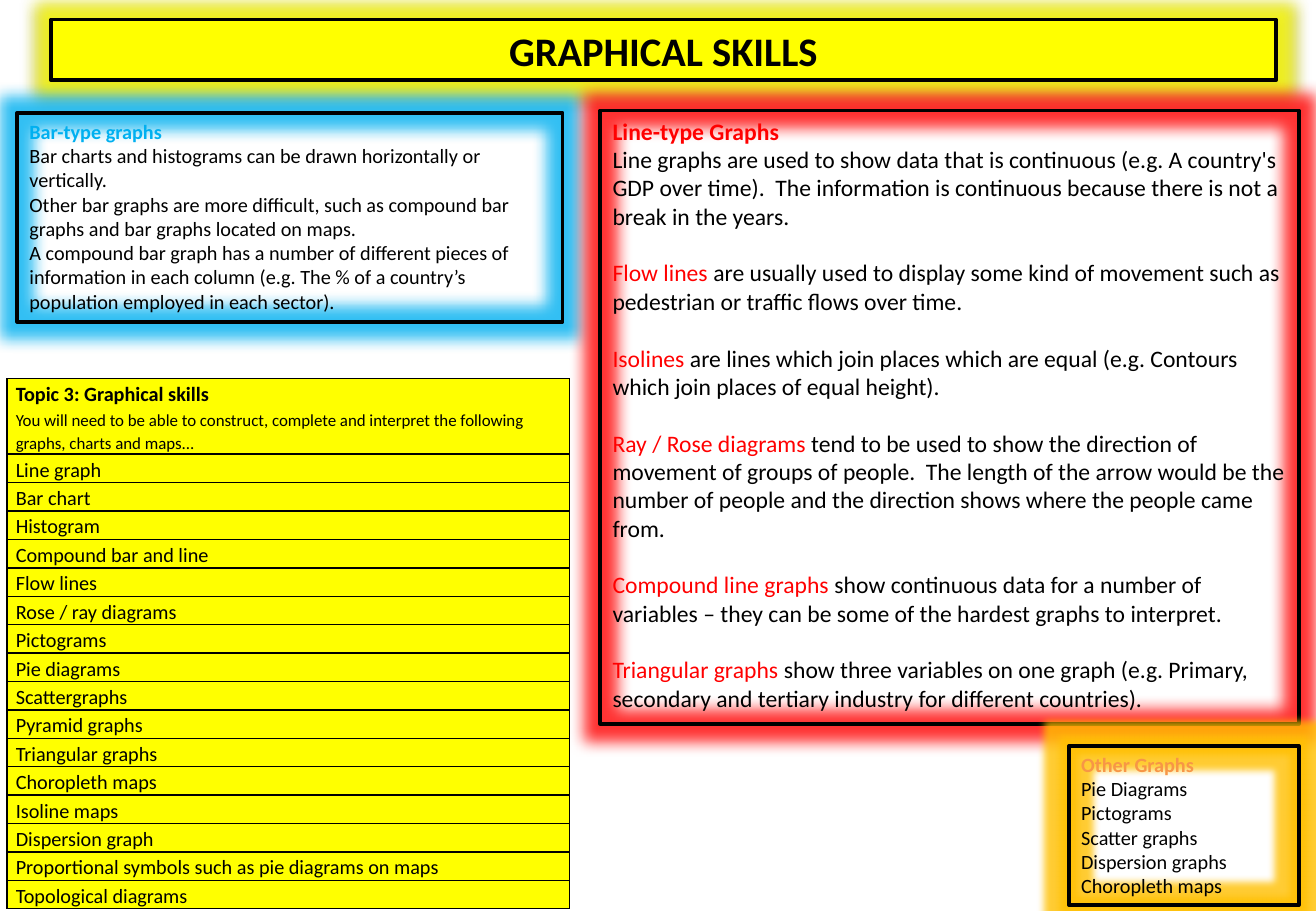
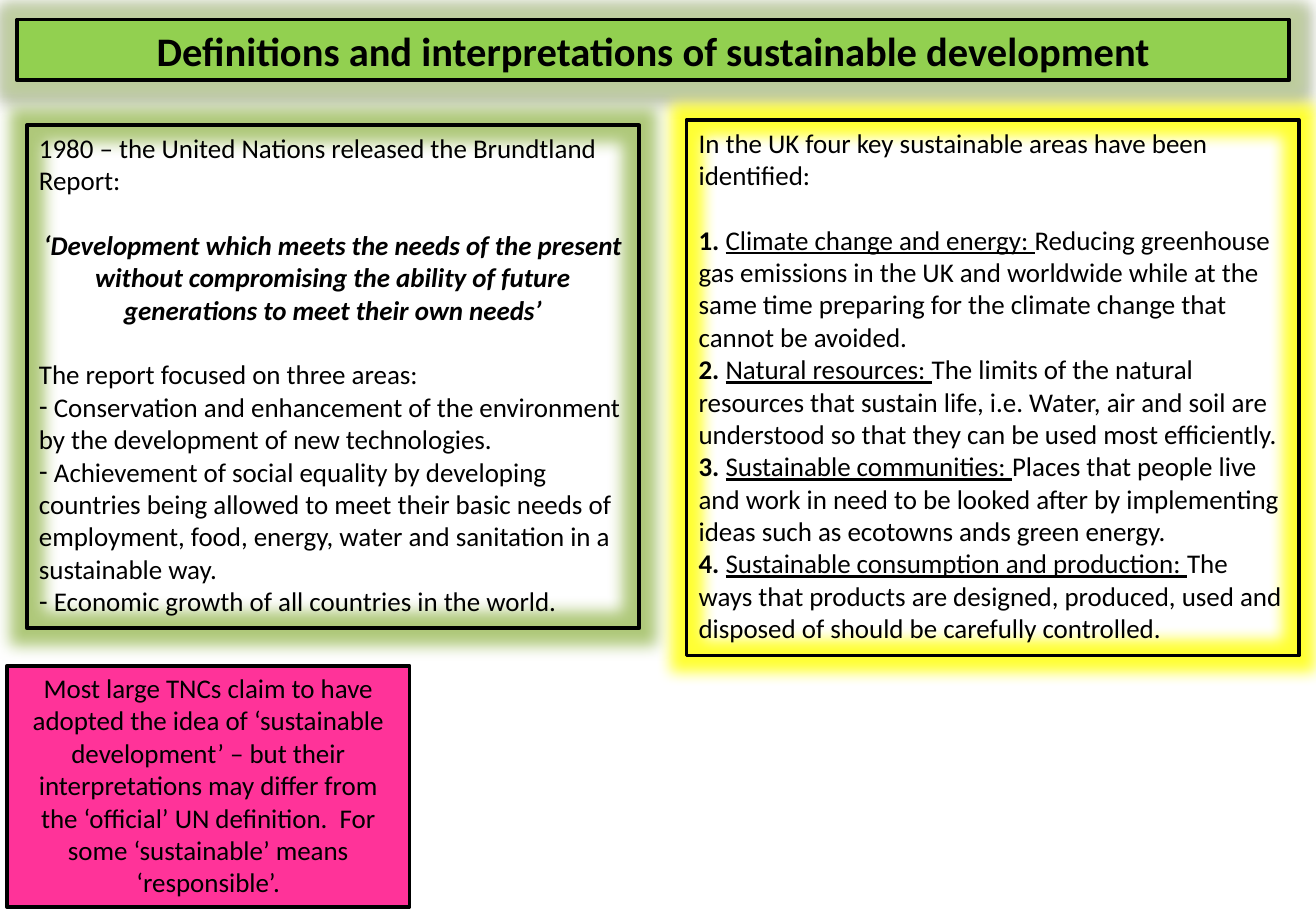
"""Two revision slides: graphical skills and sustainable development."""
from lxml.etree import SubElement, fromstring
from pptx import Presentation
from pptx.dml.color import RGBColor
from pptx.enum.text import MSO_ANCHOR, MSO_AUTO_SIZE, PP_ALIGN
from pptx.oxml.ns import qn
from pptx.util import Cm, Pt

FONT = "Calibri"
COLOURS = {"black": "000000", "yellow": "FFFF00", "blue": "00B0F0", "red": "FF0000",
           "orange": "F79646", "amber": "FFC000", "lime": "92D050", "sage": "9BBB59",
           "pale sage": "C3D69B", "pink": "FF3399"}
BOLD, UNDERLINED = {"bold": True}, {"underline": True}
RED = {"colour": "red"}
GAP, CENTRED, DASH = {"gap": True}, {"alignment": PP_ALIGN.CENTER}, {"bullet": "-"}


def heading(text, colour):
    return [(text, {"bold": True, "colour": colour})], {}


def plain(text, **layout):
    return [(text, {})], layout


def kind_of_graph(name, description):
    return [(name, RED), (description, {})], GAP


def numbered(number, area, explanation, **layout):
    return [(f"{number}. ", BOLD), (f"{area}: ", UNDERLINED), (explanation, {})], layout


SKILLS = {
    "title": {"text": "GRAPHICAL SKILLS", "box": (1.07, 0.41, 25.6, 1.27),
              "fill": "yellow", "glow": "yellow"},
    "panels": [
        {"box": (0.36, 2.36, 11.4, 4.37), "glow": "blue", "size": 12, "paragraphs": [
            heading("Bar-type graphs", "blue"),
            plain("Bar charts and histograms can be drawn horizontally or vertically."),
            plain("Other bar graphs are more difficult, such as compound bar graphs and "
                  "bar graphs located on maps."),
            plain("A compound bar graph has a number of different pieces of information in "
                  "each column (e.g. The % of a country’s population employed in each "
                  "sector)."),
        ]},
        {"box": (12.55, 2.31, 14.6, 12.83), "glow": "red", "size": 14, "paragraphs": [
            heading("Line-type Graphs", "red"),
            plain("Line graphs are used to show data that is continuous (e.g. A country's "
                  "GDP over time).  The information is continuous because there is not a "
                  "break in the years."),
            kind_of_graph("Flow lines ", "are usually used to display some kind of movement "
                          "such as pedestrian or traffic flows over time."),
            kind_of_graph("Isolines", " are lines which join places which are equal (e.g. "
                          "Contours which join places of equal height)."),
            kind_of_graph("Ray / Rose diagrams ", "tend to be used to show the direction of "
                          "movement of groups of people.  The length of the arrow would be "
                          "the number of people and the direction shows where the people "
                          "came from."),
            kind_of_graph("Compound line graphs ", "show continuous data for a number of "
                          "variables – they can be some of the hardest graphs to "
                          "interpret."),
            kind_of_graph("Triangular graphs ", "show three variables on one graph (e.g. "
                          "Primary, secondary and tertiary industry for different "
                          "countries)."),
        ]},
        {"box": (22.35, 15.6, 4.8, 3.33), "glow": "amber", "glow_radius": 9, "size": 12,
         "paragraphs": [
             heading("Other Graphs", "orange"),
             *map(plain, ["Pie Diagrams", "Pictograms", "Scatter graphs",
                          "Dispersion graphs", "Choropleth maps"]),
         ]},
    ],
}

TOPIC = {
    "left": 0.15, "top": 7.92, "width": 11.76, "header_height": 1.55, "row_height": 0.58,
    "heading": "Topic 3: Graphical skills",
    "intro": "You will need to be able to construct, complete and interpret the following "
             "graphs, charts and maps...",
    "skills": ["Line graph", "Bar chart", "Histogram", "Compound bar and line",
               "Flow lines", "Rose / ray diagrams", "Pictograms", "Pie diagrams",
               "Scattergraphs", "Pyramid graphs", "Triangular graphs", "Choropleth maps",
               "Isoline maps", "Dispersion graph",
               "Proportional symbols such as pie diagrams on maps",
               "Topological diagrams"],
}

SUSTAINABILITY = {
    "title": {"text": "Definitions and interpretations of sustainable development",
              "box": (0.36, 0.41, 26.59, 1.27), "fill": "lime", "glow": "pale sage"},
    "panels": [
        {"box": (0.56, 2.62, 12.8, 10.52), "glow": "sage", "size": 16, "paragraphs": [
            plain("1980 – the United Nations released the Brundtland Report:"),
            ([("‘Development which meets the needs of the present without compromising the "
               "ability of future generations to meet their own needs’",
               {"bold": True, "italic": True})], GAP | CENTRED),
            plain("The report focused on three areas:", **GAP),
            plain(" Conservation and enhancement of the environment by the development of "
                  "new technologies.", **DASH),
            plain(" Achievement of social equality by developing countries being allowed to "
                  "meet their basic needs of employment, food, energy, water and "
                  "sanitation in a sustainable way.", **DASH),
            plain(" Economic growth of all countries in the world.", **DASH),
        ]},
        {"box": (14.35, 2.51, 12.8, 11.2), "glow": "yellow", "size": 16, "paragraphs": [
            plain("In the UK four key sustainable areas have been identified:"),
            numbered(1, "Climate change and energy", "Reducing greenhouse gas emissions in "
                     "the UK and worldwide while at the same time preparing for the climate "
                     "change that cannot be avoided.", **GAP),
            numbered(2, "Natural resources", "The limits of the natural resources that "
                     "sustain life, i.e. Water, air and soil are understood so that they "
                     "can be used most efficiently."),
            numbered(3, "Sustainable communities", "Places that people live and work in "
                     "need to be looked after by implementing ideas such as ecotowns ands "
                     "green energy."),
            numbered(4, "Sustainable consumption and production", "The ways that products "
                     "are designed, produced, used and disposed of should be carefully "
                     "controlled."),
        ]},
        {"box": (0.15, 13.92, 8.41, 5.05), "fill": "pink", "size": 16, "paragraphs": [
            plain("Most large TNCs claim to have adopted the idea of ‘sustainable "
                  "development’ – but their interpretations may differ from the ‘official’ "
                  "UN definition.  For some ‘sustainable’ means ‘responsible’.", **CENTRED),
        ]},
    ],
}


def rgb(colour):
    return RGBColor.from_string(COLOURS[colour])


def apply(target, formats):
    for attribute, value in formats.items():
        setattr(target, attribute, value)


def add_colour(parent, colour, alpha):
    tint = SubElement(parent, qn("a:srgbClr"), val=COLOURS[colour])
    SubElement(tint, qn("a:alpha"), val=str(alpha * 1000))


def frame(box, look, shadow=False):
    """Place a box and give it the black outline, fill, glow and shadow."""
    apply(box, dict(zip(("left", "top", "width", "height"), map(Cm, look["box"]))))
    box.shadow.inherit = False
    if "fill" in look:
        box.fill.solid()
        box.fill.fore_color.rgb = rgb(look["fill"])
    else:
        box.fill.background()
    box.line.color.rgb = rgb("black")
    box.line.width = Pt(2.25)
    effects = box.element.spPr.find(qn("a:effectLst"))
    if "glow" in look:
        radius = Pt(look.get("glow_radius", 18))
        add_colour(SubElement(effects, qn("a:glow"), rad=str(radius)), look["glow"], 80)
    if shadow:
        cast = SubElement(effects, qn("a:outerShdw"), blurRad=str(Pt(3.1)),
                          dist=str(Pt(1.6)), dir="5400000", rotWithShape="0")
        add_colour(cast, "black", 38)
    apply(box.text_frame, {"word_wrap": True, "auto_size": MSO_AUTO_SIZE.NONE})


def write(text_frame, paragraphs, size, line_spacing=1.0):
    """Fill a text frame with paragraphs of formatted runs."""
    for index, (runs, layout) in enumerate(paragraphs):
        paragraph = text_frame.add_paragraph() if index else text_frame.paragraphs[0]
        properties = paragraph._p.get_or_add_pPr()
        for indent in ("marL", "indent"):
            properties.set(indent, "0")
        if "bullet" in layout:
            SubElement(properties, qn("a:buChar"), char=layout["bullet"])
        else:
            SubElement(properties, qn("a:buNone"))
        apply(paragraph, {"alignment": layout.get("alignment", PP_ALIGN.LEFT),
                          "line_spacing": line_spacing,
                          "space_before": Pt(size * 1.2 if "gap" in layout else 0),
                          "space_after": Pt(0)})
        for text, style in runs:
            run = paragraph.add_run()
            run.text = text
            look = {"name": FONT, "size": Pt(size), "bold": False} | style
            run.font.color.rgb = rgb(look.pop("colour", "black"))
            apply(run.font, look)


def add_sheet(deck, sheet):
    """Add a slide with its title band and three framed panels."""
    slide = deck.slides.add_slide(deck.slide_layouts[3])
    band, *bodies = slide.placeholders
    title = sheet["title"]
    frame(band, title, shadow=True)
    write(band.text_frame, [([(title["text"], BOLD)], CENTRED)], 24)
    bodies.append(slide.shapes.add_textbox(0, 0, 0, 0))
    for box, panel in zip(bodies, sheet["panels"]):
        frame(box, panel)
        box.text_frame.vertical_anchor = MSO_ANCHOR.TOP
        write(box.text_frame, panel["paragraphs"], panel["size"])
    return slide


def border_cell(cell):
    properties = cell._tc.get_or_add_tcPr()
    for position, side in enumerate(("lnL", "lnR", "lnT", "lnB")):
        edge = fromstring(
            f'<a:{side} xmlns:a="http://schemas.openxmlformats.org/drawingml/2006/main" '
            f'w="{Pt(1)}"><a:solidFill><a:srgbClr val="{COLOURS["black"]}"/>'
            f'</a:solidFill></a:{side}>')
        properties.insert(position, edge)


def add_topic_table(slide, topic):
    rows = [[([(topic["heading"], BOLD)], {}),
             ([(topic["intro"], {"size": Pt(10)})], {})]]
    rows += [[plain(skill)] for skill in topic["skills"]]
    heights = [topic["header_height"]] + [topic["row_height"]] * len(topic["skills"])
    table = slide.shapes.add_table(
        len(rows), 1, *(Cm(topic[key]) for key in ("left", "top", "width")),
        Cm(sum(heights))).table
    apply(table, {"first_row": False, "horz_banding": False})
    for row, height, paragraphs in zip(table.rows, heights, rows):
        row.height = Cm(height)
        cell = row.cells[0]
        apply(cell, {"margin_left": Cm(0.18), "margin_right": Cm(0.18), "margin_top": 0,
                     "margin_bottom": 0, "vertical_anchor": MSO_ANCHOR.MIDDLE})
        cell.fill.solid()
        cell.fill.fore_color.rgb = rgb("yellow")
        border_cell(cell)
        write(cell.text_frame, paragraphs, 12, line_spacing=1.15)


def main():
    deck = Presentation()
    apply(deck, {"slide_width": Cm(27.51), "slide_height": Cm(19.05)})
    add_topic_table(add_sheet(deck, SKILLS), TOPIC)
    add_sheet(deck, SUSTAINABILITY)
    deck.save("out.pptx")


if __name__ == "__main__":
    main()
